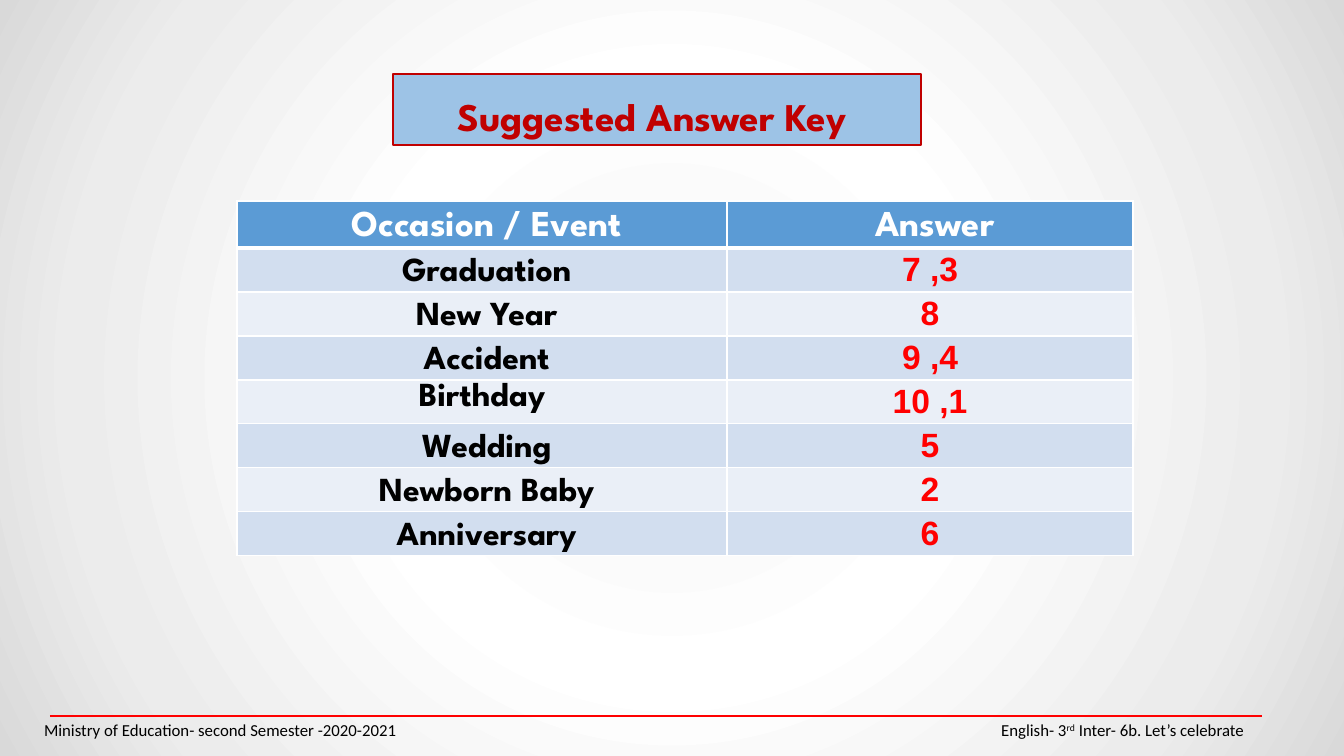
"""Build the answer key slide about occasions and events."""

from dataclasses import dataclass
from typing import NamedTuple

from lxml.etree import SubElement
from pptx import Presentation
from pptx.dml.color import RGBColor
from pptx.enum.shapes import MSO_CONNECTOR as Connector
from pptx.enum.text import MSO_ANCHOR as Anchor
from pptx.enum.text import MSO_AUTO_SIZE as AutoSize
from pptx.enum.text import PP_ALIGN as Align
from pptx.oxml import parse_xml
from pptx.oxml.ns import nsdecls, qn
from pptx.util import Emu, Pt

PX = 9071
WHITE = RGBColor(0xFF, 0xFF, 0xFF)
BLACK = RGBColor(0x00, 0x00, 0x00)
RED = RGBColor(0xFF, 0x00, 0x00)
DARK_RED = RGBColor(0xC0, 0x00, 0x00)
SKY = RGBColor(0x9D, 0xC3, 0xE6)
BLUE = RGBColor(0x5B, 0x9B, 0xD5)
BANDS = (RGBColor(0xD2, 0xDE, 0xEF), RGBColor(0xEA, 0xEF, 0xF7))
BACKDROP = (
    (0, RGBColor(0xF2, 0xF2, 0xF2)),
    (39, WHITE),
    (78, RGBColor(0xEC, 0xEC, 0xEC)),
    (100, RGBColor(0xD9, 0xD9, 0xD9)),
)


class Box(NamedTuple):
    """Left, top, width and height in px."""

    left: int
    top: int
    width: int
    height: int

    def emu(self) -> tuple[Emu, ...]:
        """Return the four lengths in EMU."""
        return tuple(px(length) for length in self)


@dataclass(frozen=True)
class Style:
    """Look of a run of text."""

    size: int
    color: RGBColor
    font: str = "League Spartan"
    bold: bool = True


@dataclass(frozen=True)
class AnswerRow:
    """One occasion with its answer numbers."""

    occasion: str
    answer: str


TITLE_BOX = Box(393, 74, 528, 71)
TABLE_BOX = Box(237, 201, 896, 357)
FOOTER_BOX = Box(34, 710, 1247, 40)
COLUMNS = (490, 406)
HEADER_HEIGHT, ROW_HEIGHT, CELL_MARGIN = 47, 44, 3
RULE_LEFT, RULE_RIGHT, RULE_TOP = 50, 1262, 716
FOOTER_INSET, FOOTER_TAB = 10, 1200

TITLE = Style(28, DARK_RED)
HEADER = Style(26, WHITE)
OCCASION = Style(24, BLACK)
ANSWER = Style(24, RED)
FOOTER = Style(12, BLACK, "Calibri", False)

ROWS = (
    AnswerRow("Occasion / Event ", "Answer "),
    AnswerRow("Graduation ", "3, 7"),
    AnswerRow("New Year ", "8"),
    AnswerRow("Accident ", "4, 9"),
    AnswerRow("Birthday", "1, 10"),
    AnswerRow("Wedding ", "5"),
    AnswerRow("Newborn Baby ", "2"),
    AnswerRow("Anniversary ", "6"),
)


def px(length: int) -> Emu:
    """Turn px into EMU."""
    return Emu(length * PX)


def add_run(para, text: str, style: Style):
    """Add one styled run to a paragraph."""
    span = para.add_run()
    span.text = text
    span.font.name = style.font
    span.font.size = Pt(style.size)
    span.font.bold = style.bold
    span.font.color.rgb = style.color
    return span


def paint_background(slide) -> None:
    """Give the slide a circular grey gradient."""
    stops = "".join(
        f'<a:gs pos="{place * 1000}"><a:srgbClr val="{color}"/></a:gs>'
        for place, color in BACKDROP
    )
    background = parse_xml(
        f'<p:bg {nsdecls("p", "a")}><p:bgPr><a:gradFill rotWithShape="1">'
        f'<a:gsLst>{stops}</a:gsLst><a:path path="circle">'
        '<a:fillToRect l="50000" t="50000" r="50000" b="50000"/></a:path>'
        "</a:gradFill><a:effectLst/></p:bgPr></p:bg>"
    )
    slide.element.cSld.insert(0, background)


def fill_title(title) -> None:
    """Place and write the framed title."""
    title.left, title.top, title.width, title.height = TITLE_BOX.emu()
    title.fill.solid()
    title.fill.fore_color.rgb = SKY
    title.line.color.rgb = DARK_RED
    title.line.width = Pt(1)
    frame = title.text_frame
    frame.auto_size = AutoSize.NONE
    frame.vertical_anchor = Anchor.MIDDLE
    para = frame.paragraphs[0]
    para.alignment = Align.CENTER
    para.line_spacing = Pt(43.2)
    add_run(para, "Suggested Answer Key ", TITLE)


def add_borders(cell, bottom: int) -> None:
    """Draw white borders around a cell."""
    properties = cell._tc.get_or_add_tcPr()
    for side, points in (("L", 1), ("R", 1), ("T", 1), ("B", bottom)):
        line = SubElement(properties, qn(f"a:ln{side}"), w=str(Pt(points)))
        solid = SubElement(line, qn("a:solidFill"))
        SubElement(solid, qn("a:srgbClr"), val=str(WHITE))


def fill_cell(cell, text: str, style: Style, color: RGBColor, bottom: int) -> None:
    """Write a right-to-left table cell."""
    add_borders(cell, bottom)
    cell.fill.solid()
    cell.fill.fore_color.rgb = color
    cell.margin_top = cell.margin_bottom = px(CELL_MARGIN)
    para = cell.text_frame.paragraphs[0]
    para.alignment = Align.CENTER
    para._p.get_or_add_pPr().set("rtl", "1")
    span = add_run(para, text, style)
    SubElement(span._r.get_or_add_rPr(), qn("a:cs"), typeface="Arial")


def add_answers(slide) -> None:
    """Add the table of occasions and answers."""
    table = slide.shapes.add_table(len(ROWS), len(COLUMNS), *TABLE_BOX.emu()).table
    for column, width in zip(table.columns, COLUMNS):
        column.width = px(width)
    for index, row in enumerate(ROWS):
        is_header = index == 0
        table.rows[index].height = px(HEADER_HEIGHT if is_header else ROW_HEIGHT)
        color = BLUE if is_header else BANDS[(index - 1) % 2]
        styles = (HEADER, HEADER) if is_header else (OCCASION, ANSWER)
        for column, text in enumerate((row.occasion, row.answer)):
            cell = table.cell(index, column)
            fill_cell(cell, text, styles[column], color, 3 if is_header else 1)


def add_footer(slide) -> None:
    """Add the red rule and the footer line below it."""
    rule = slide.shapes.add_connector(
        Connector.STRAIGHT, px(RULE_LEFT), px(RULE_TOP), px(RULE_RIGHT), px(RULE_TOP)
    )
    rule.line.color.rgb = RED
    rule.line.width = Pt(0.75)
    SubElement(rule._element.spPr, qn("a:effectLst"))

    frame = slide.shapes.add_textbox(*FOOTER_BOX.emu()).text_frame
    frame.word_wrap = True
    frame.vertical_anchor = Anchor.MIDDLE
    frame.margin_left = px(FOOTER_INSET)
    para = frame.paragraphs[0]
    tabs = SubElement(para._p.get_or_add_pPr(), qn("a:tabLst"))
    SubElement(tabs, qn("a:tab"), pos=str(px(FOOTER_TAB)), algn="r")
    add_run(para, "Ministry of Education- second Semester -2020-2021\tEnglish- 3", FOOTER)
    ordinal = add_run(para, "rd", FOOTER)
    ordinal._r.get_or_add_rPr().set("baseline", "30000")
    add_run(para, " Inter- 6b. Let’s celebrate", FOOTER)


def main() -> None:
    """Build and save the deck."""
    deck = Presentation()
    deck.slide_width, deck.slide_height = px(1344), px(756)
    page = deck.slides.add_slide(deck.slide_layouts[5])
    paint_background(page)
    fill_title(page.shapes.title)
    add_answers(page)
    add_footer(page)
    deck.save("out.pptx")


if __name__ == "__main__":
    main()
